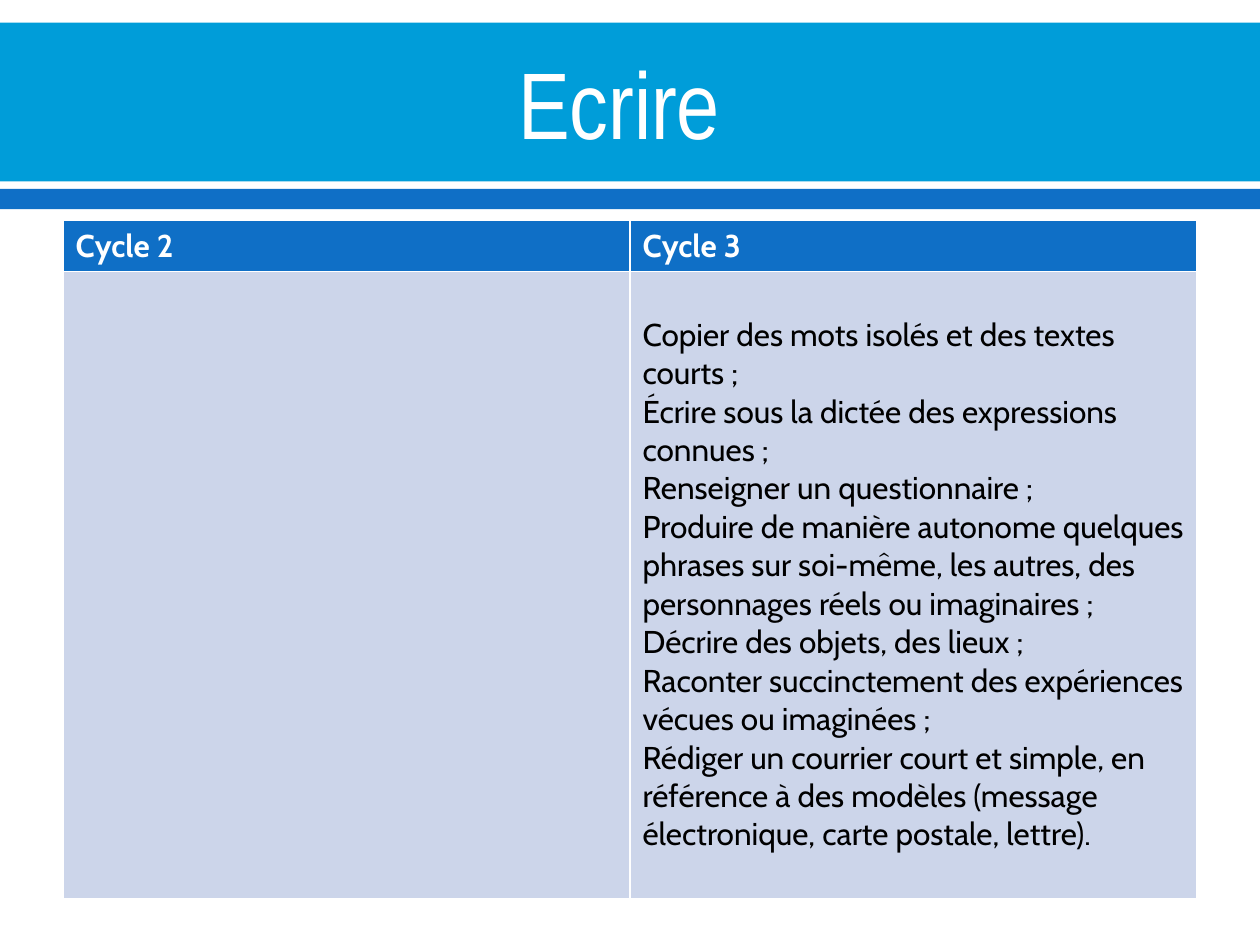
from dataclasses import dataclass

from pptx import Presentation
from pptx.dml.color import RGBColor
from pptx.enum.shapes import MSO_SHAPE
from pptx.enum.text import MSO_ANCHOR, MSO_AUTO_SIZE, PP_ALIGN
from pptx.util import Inches, Pt


@dataclass(frozen=True)
class Theme:
    sky: RGBColor = RGBColor(0x00, 0x9D, 0xD9)
    blue: RGBColor = RGBColor(0x0F, 0x6F, 0xC6)
    pale: RGBColor = RGBColor(0xCC, 0xD5, 0xEA)
    white: RGBColor = RGBColor(0xFF, 0xFF, 0xFF)
    black: RGBColor = RGBColor(0x00, 0x00, 0x00)
    title_font: str = "Arial Narrow"
    body_font: str = "Cabin"
    title_size: Pt = Pt(54)
    body_size: Pt = Pt(18)


THEME = Theme()

SKILLS = {
    "Cycle 2": [],
    "Cycle 3": [
        "Copier des mots isolés et des textes courts ;",
        "Écrire sous la dictée des expressions connues ;",
        "Renseigner un questionnaire ;",
        "Produire de manière autonome quelques phrases sur soi-même, "
        "les autres, des personnages réels ou imaginaires ;",
        "Décrire des objets, des lieux ;",
        "Raconter succinctement des expériences vécues ou imaginées ;",
        "Rédiger un courrier court et simple, en référence à des modèles "
        "(message électronique, carte postale, lettre).",
    ],
}


def style_font(font, name, size, color, bold=False):
    font.name = name
    font.size = size
    font.bold = bold
    font.color.rgb = color


def add_band(slide, top, height, color):
    """Add a full-width band behind the title."""
    band = slide.shapes.add_shape(
        MSO_SHAPE.RECTANGLE, 0, Inches(top), Inches(10), Inches(height))
    band.shadow.inherit = False
    band.fill.solid()
    band.fill.fore_color.rgb = color
    band.line.fill.background()


def set_title(slide, text):
    title = slide.shapes.title
    title.left, title.top = Inches(0.5), Inches(0.2)
    title.width, title.height = Inches(9), Inches(1.22)
    frame = title.text_frame
    frame.text = text
    frame.auto_size = MSO_AUTO_SIZE.NONE
    frame.vertical_anchor = MSO_ANCHOR.MIDDLE
    heading = frame.paragraphs[0]
    heading.alignment = PP_ALIGN.CENTER
    style_font(heading.font, THEME.title_font, THEME.title_size, THEME.white)
    # Bring the title in front of the bands
    slide.shapes._spTree.append(title._element)


def fill_cell(cell, lines, fill, color, bold=False):
    cell.fill.solid()
    cell.fill.fore_color.rgb = fill
    cell.text = "\n".join(lines)
    for paragraph in cell.text_frame.paragraphs:
        style_font(paragraph.font, THEME.body_font, THEME.body_size, color, bold)


def add_skills_table(slide, skills):
    header_height, body_height = Inches(0.4), Inches(4.98)
    table = slide.shapes.add_table(
        2, len(skills), Inches(0.5), Inches(1.75), Inches(9),
        header_height + body_height).table
    table.rows[0].height = header_height
    table.rows[1].height = body_height
    for column, (cycle, lines) in enumerate(skills.items()):
        fill_cell(table.cell(0, column), [cycle], THEME.blue, THEME.white, True)
        body = table.cell(1, column)
        fill_cell(body, lines, THEME.pale, THEME.black)
        body.margin_top = Inches(0.35)


def main():
    presentation = Presentation()
    presentation.slide_width = Inches(10)
    presentation.slide_height = Inches(7.5)
    slide = presentation.slides.add_slide(presentation.slide_layouts[5])
    add_band(slide, 0.18, 1.26, THEME.sky)
    add_band(slide, 1.5, 0.16, THEME.blue)
    set_title(slide, "Ecrire ")
    add_skills_table(slide, SKILLS)
    presentation.save("out.pptx")


if __name__ == "__main__":
    main()
